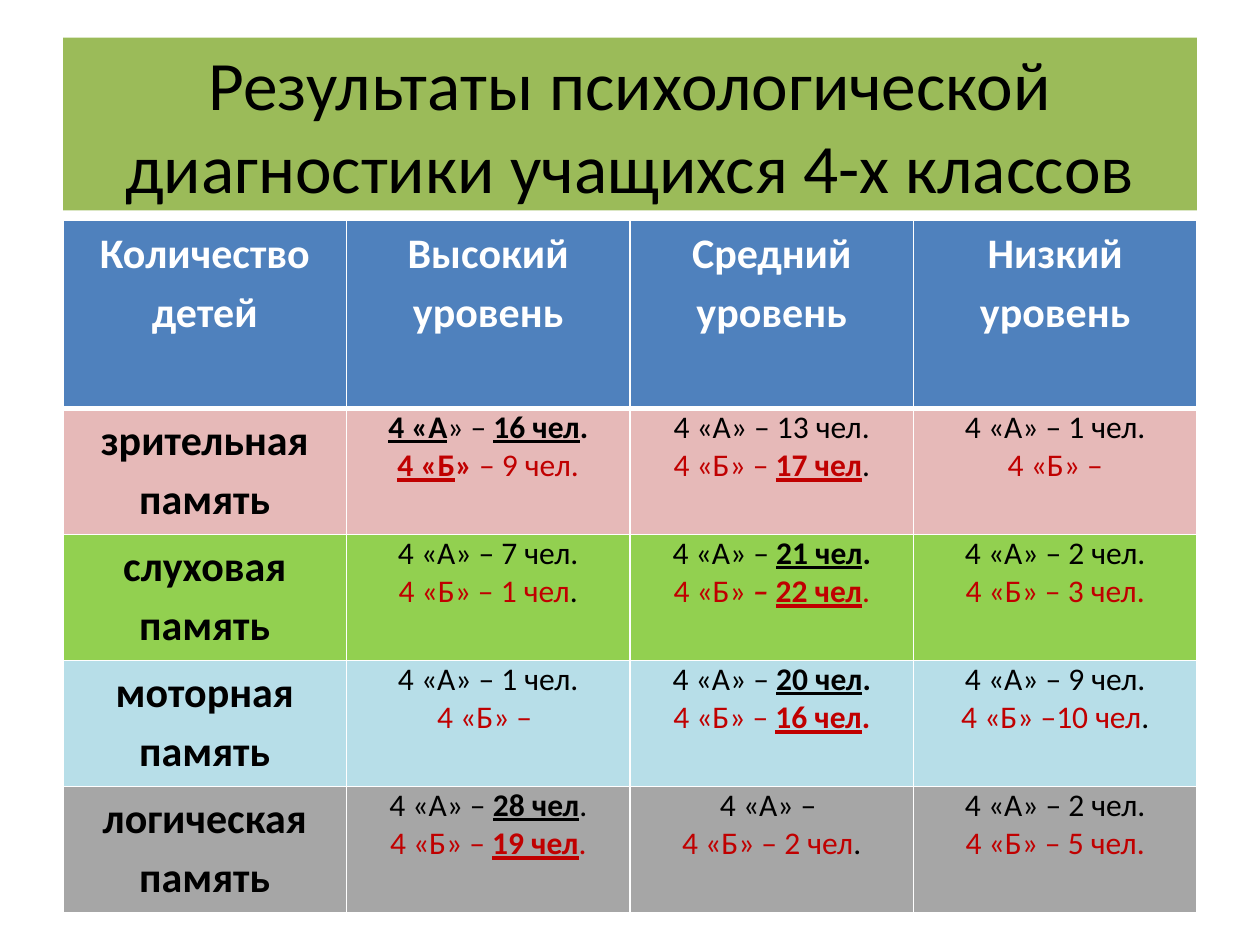
from pptx import Presentation
from pptx.dml.color import RGBColor
from pptx.enum.text import MSO_ANCHOR, MSO_AUTO_SIZE, PP_ALIGN
from pptx.oxml.ns import qn
from pptx.util import Cm, Pt
from lxml import etree

CENTER = PP_ALIGN.CENTER
MIDDLE = MSO_ANCHOR.MIDDLE
NO_AUTOFIT = MSO_AUTO_SIZE.NONE
TITLE_ONLY = 5

FONT = "Calibri"
BLACK = RGBColor(0x00, 0x00, 0x00)
WHITE = RGBColor(0xFF, 0xFF, 0xFF)
RED = RGBColor(0xC0, 0x00, 0x00)
OLIVE = RGBColor(0x9B, 0xBB, 0x59)
BLUE = RGBColor(0x4F, 0x81, 0xBD)
PINK = RGBColor(0xE6, 0xB9, 0xB8)
GREEN = RGBColor(0x92, 0xD0, 0x50)
AQUA = RGBColor(0xB7, 0xDE, 0xE8)
GREY = RGBColor(0xA6, 0xA6, 0xA6)

LEFT = Cm(1.27)
WIDTH = Cm(22.86)
HEADER_HEIGHT = Cm(3.78)
ROW_HEIGHT = Cm(2.54)

TITLE = "Результаты психологической диагностики учащихся 4-х классов"
HEADERS = ["Количество детей", "Высокий уровень", "Средний уровень", "Низкий уровень"]

# Each span is (text, marks): b bold, u underline, i italic, r red.
ROWS = [
    ("зрительная память", PINK, [
        ([("4 «А", "bu"), ("» – ", ""), ("16 чел", "bu"), (".", "b")],
         [("4 «Б", "bur"), ("» ", "br"), ("– 9 чел.", "r")]),
        ([("4 «А» – 13 чел.", "")],
         [("4 «Б» – ", "r"), ("17 чел", "bur"), (".", "")]),
        ([("4 «А» – 1 чел.", "")],
         [("4 «Б» –", "r")]),
    ]),
    ("слуховая память", GREEN, [
        ([("4 «А» – 7 чел.", "")],
         [("4 «Б» – 1 чел", "r"), (".", "")]),
        ([("4 «А» – ", ""), ("21 чел", "bu"), (".", "b")],
         [("4 «Б» ", "r"), ("– ", "bir"), ("22 чел", "bur"), (".", "r")]),
        ([("4 «А» – 2 чел.", "")],
         [("4 «Б» – 3 чел.", "r")]),
    ]),
    ("моторная память", AQUA, [
        ([("4 «А» – 1 чел.", "")],
         [("4 «Б» – ", "r")]),
        ([("4 «А» – ", ""), ("20 чел", "bu"), (".", "b")],
         [("4 «Б» – ", "r"), ("16 чел", "bur"), (".", "br")]),
        ([("4 «А» – 9 чел.", "")],
         [("4 «Б» –10 чел", "r"), (".", "")]),
    ]),
    ("логическая память", GREY, [
        ([("4 «А» – ", ""), ("28 чел", "bu"), (".", "")],
         [("4 «Б» – ", "r"), ("19 чел", "bur"), (".", "r")]),
        ([("4 «А» – ", "")],
         [("4 «Б» – 2 чел", "r"), (".", "")]),
        ([("4 «А» – 2 чел.", "")],
         [("4 «Б» – 5 чел.", "r")]),
    ]),
]


def add_span(para, text, size, color, marks=""):
    span = para.add_run()
    span.text = text
    font = span.font
    font.name = FONT
    font.size = Pt(size)
    font.color.rgb = color
    font.bold = "b" in marks
    font.italic = "i" in marks
    font.underline = "u" in marks


def add_title(page):
    box = page.shapes.title
    box.left, box.top, box.width, box.height = LEFT, Cm(0.76), WIDTH, Cm(3.48)
    box.fill.solid()
    box.fill.fore_color.rgb = OLIVE
    frame = box.text_frame
    frame.word_wrap = True
    frame.auto_size = NO_AUTOFIT
    frame.vertical_anchor = MIDDLE
    para = frame.paragraphs[0]
    para.alignment = CENTER
    add_span(para, TITLE, 39.6, BLACK)


def add_border(cell, side, points):
    properties = cell._tc.get_or_add_tcPr()
    line = etree.SubElement(properties, qn(f"a:ln{side}"), w=str(Pt(points)))
    fill = etree.SubElement(line, qn("a:solidFill"))
    etree.SubElement(fill, qn("a:srgbClr"), val=str(WHITE))


def format_cell(cell, color, top=1, bottom=1):
    cell.margin_left = cell.margin_right = Cm(0.18)
    cell.margin_top = cell.margin_bottom = 0
    for side, points in zip("LRTB", (1, 1, top, bottom)):
        add_border(cell, side, points)
    cell.fill.solid()
    cell.fill.fore_color.rgb = color


def fill_heading(cell, text, color):
    para = cell.text_frame.paragraphs[0]
    para.alignment = CENTER
    para.line_spacing = 1.15
    add_span(para, text, 24, color, "b")


def fill_counts(cell, lines):
    frame = cell.text_frame
    for index, spans in enumerate(lines):
        para = frame.add_paragraph() if index else frame.paragraphs[0]
        para.alignment = CENTER
        for text, marks in spans:
            add_span(para, text, 18, RED if "r" in marks else BLACK, marks)


def add_results_table(page):
    height = HEADER_HEIGHT + ROW_HEIGHT * len(ROWS)
    table = page.shapes.add_table(
        len(ROWS) + 1, len(HEADERS), LEFT, Cm(4.45), WIDTH, height).table
    for row in table.rows:
        row.height = ROW_HEIGHT
    table.rows[0].height = HEADER_HEIGHT

    for column, text in enumerate(HEADERS):
        cell = table.cell(0, column)
        format_cell(cell, BLUE, bottom=3)
        fill_heading(cell, text, WHITE)

    for row, (name, color, counts) in enumerate(ROWS, 1):
        for column in range(len(HEADERS)):
            format_cell(table.cell(row, column), color, top=3 if row == 1 else 1)
        fill_heading(table.cell(row, 0), name, BLACK)
        for column, lines in enumerate(counts, 1):
            fill_counts(table.cell(row, column), lines)


def main():
    deck = Presentation()
    deck.slide_width, deck.slide_height = Cm(25.4), Cm(19.05)
    page = deck.slides.add_slide(deck.slide_layouts[TITLE_ONLY])
    add_title(page)
    add_results_table(page)
    deck.save("out.pptx")


if __name__ == "__main__":
    main()
